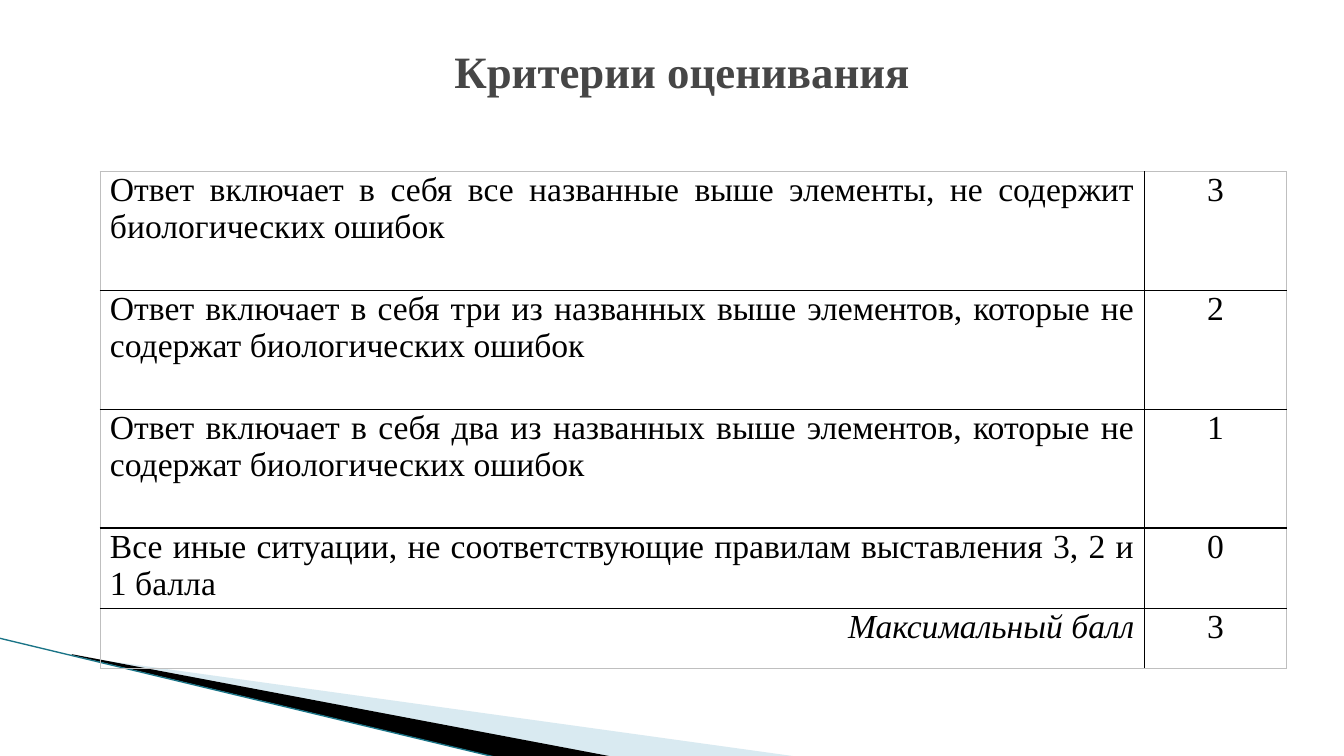
from dataclasses import dataclass
from typing import Optional

from lxml import etree
from pptx import Presentation
from pptx.dml.color import RGBColor
from pptx.enum.shapes import MSO_CONNECTOR
from pptx.enum.text import MSO_ANCHOR, PP_ALIGN
from pptx.oxml import parse_xml
from pptx.oxml.ns import nsdecls, qn
from pptx.util import Inches, Pt

CENTER, JUSTIFY, RIGHT = PP_ALIGN.CENTER, PP_ALIGN.JUSTIFY, PP_ALIGN.RIGHT
MIDDLE = MSO_ANCHOR.MIDDLE
STRAIGHT = MSO_CONNECTOR.STRAIGHT
BLANK_LAYOUT = 6

SLIDE_WIDTH, SLIDE_HEIGHT = Inches(13.33), Inches(7.5)


@dataclass(frozen=True)
class Theme:
    font: str = "Times New Roman"
    title_size: float = 32
    body_size: float = 24
    title: str = "464646"
    text: str = "000000"
    grid: str = "000000"
    frame: str = "BFBFBF"
    pale_wedge: str = "A0CBDC"
    dark_wedge: str = "000000"
    edge: str = "1A7487"
    grid_width: float = 1
    frame_width: float = 0.5
    edge_width: float = 0.95


@dataclass(frozen=True)
class Wedge:
    points: tuple[tuple[float, float], ...]
    color: str
    opacity: Optional[int] = None


@dataclass(frozen=True)
class Criterion:
    text: str
    score: str
    height: float
    alignment: PP_ALIGN = JUSTIFY
    italic: bool = False


THEME = Theme()

# Positions are percentages of the slide's width and height
TITLE_BOX = (5.03, 4, 91.45, 10.67)
TABLE_ORIGIN = (7.43, 22.67)
COLUMN_WIDTHS = (77.72, 10.58)
TALL_ROW, SHORT_ROW = 15.73, 7.87
EDGE_LINE = ((-0.08, 84.4), (37.13, 100.27))

WEDGES = (
    Wedge(((5.48, 86.8), (59.49, 100.13), (45.61, 100.13), (5.48, 86.67)),
          THEME.pale_wedge, 40),
    Wedge(((5.33, 86.53), (45.69, 100.13), (37.21, 100.27), (5.4, 86.67)),
          THEME.dark_wedge),
)

CRITERIA = (
    Criterion("Ответ включает в себя все названные выше элементы, "
              "не содержит биологических ошибок", "3", TALL_ROW),
    Criterion("Ответ включает в себя три из названных выше элементов, "
              "которые не содержат биологических ошибок", "2", TALL_ROW),
    Criterion("Ответ включает в себя два из названных выше элементов, "
              "которые не содержат биологических ошибок", "1", TALL_ROW),
    Criterion("Все иные ситуации, не соответствующие правилам "
              "выставления 3, 2 и 1 балла", "0", SHORT_ROW),
    Criterion("Максимальный балл", "3", SHORT_ROW, RIGHT, True),
)


def across(share: float) -> int:
    return round(SLIDE_WIDTH * share / 100)


def down(share: float) -> int:
    return round(SLIDE_HEIGHT * share / 100)


def write(text_frame, text: str, size: float, color: str, alignment: PP_ALIGN,
          bold: bool = False, italic: bool = False) -> None:
    text_frame.text = text
    paragraph = text_frame.paragraphs[0]
    paragraph.alignment = alignment
    font = paragraph.runs[0].font
    font.name, font.size = THEME.font, Pt(size)
    font.bold, font.italic = bold, italic
    font.color.rgb = RGBColor.from_string(color)


def draw_wedge(slide, wedge: Wedge) -> None:
    start, *others = [(across(x), down(y)) for x, y in wedge.points]
    builder = slide.shapes.build_freeform(*start)
    builder.add_line_segments(others, close=True)
    shape = builder.convert_to_shape()
    shape.shadow.inherit = False
    shape.line.fill.background()
    shape.fill.solid()
    shape.fill.fore_color.rgb = RGBColor.from_string(wedge.color)
    if wedge.opacity is not None:
        color = shape.fill._xPr.find(qn("a:solidFill"))[0]
        alpha = etree.SubElement(color, qn("a:alpha"))
        alpha.set("val", str(wedge.opacity * 1000))


def draw_edge(slide) -> None:
    (left, top), (right, bottom) = EDGE_LINE
    connector = slide.shapes.add_connector(
        STRAIGHT, across(left), down(top), across(right), down(bottom))
    connector.line.color.rgb = RGBColor.from_string(THEME.edge)
    connector.line.width = Pt(THEME.edge_width)
    etree.SubElement(connector._element.spPr, qn("a:effectLst"))


def draw_title(slide) -> None:
    left, top, width, height = TITLE_BOX
    box = slide.shapes.add_textbox(across(left), down(top), across(width), down(height))
    box.text_frame.word_wrap = True
    box.text_frame.vertical_anchor = MIDDLE
    write(box.text_frame, "Критерии оценивания", THEME.title_size, THEME.title,
          CENTER, bold=True)


def set_borders(cell, outer_sides: dict[str, bool]) -> None:
    properties = cell._tc.get_or_add_tcPr()
    for side, outer in outer_sides.items():
        color = THEME.frame if outer else THEME.grid
        width = Pt(THEME.frame_width if outer else THEME.grid_width)
        properties.append(parse_xml(
            f'<a:{side} {nsdecls("a")} w="{width}"><a:solidFill>'
            f'<a:srgbClr val="{color}"/></a:solidFill></a:{side}>'))


def draw_table(slide) -> None:
    left, top = TABLE_ORIGIN
    row_count, column_count = len(CRITERIA), len(COLUMN_WIDTHS)
    table = slide.shapes.add_table(
        row_count, column_count, across(left), down(top), across(sum(COLUMN_WIDTHS)),
        down(sum(criterion.height for criterion in CRITERIA))).table
    table.first_row = table.horz_banding = False
    for column, width in zip(table.columns, COLUMN_WIDTHS):
        column.width = across(width)

    for row, criterion in enumerate(CRITERIA):
        table.rows[row].height = down(criterion.height)
        contents = ((criterion.text, criterion.alignment, criterion.italic),
                    (criterion.score, CENTER, False))
        for column, (text, alignment, italic) in enumerate(contents):
            cell = table.cell(row, column)
            cell.margin_left = cell.margin_right = Inches(0.1)
            cell.margin_top = cell.margin_bottom = 0
            set_borders(cell, {"lnL": column == 0, "lnR": column == column_count - 1,
                               "lnT": row == 0, "lnB": row == row_count - 1})
            cell.fill.background()
            write(cell.text_frame, text, THEME.body_size, THEME.text, alignment,
                  italic=italic)


def main() -> None:
    presentation = Presentation()
    presentation.slide_width, presentation.slide_height = SLIDE_WIDTH, SLIDE_HEIGHT
    slide = presentation.slides.add_slide(presentation.slide_layouts[BLANK_LAYOUT])

    # Corner decoration
    for wedge in WEDGES:
        draw_wedge(slide, wedge)
    draw_edge(slide)

    # Title and grading table
    draw_title(slide)
    draw_table(slide)
    presentation.save("out.pptx")


if __name__ == "__main__":
    main()
